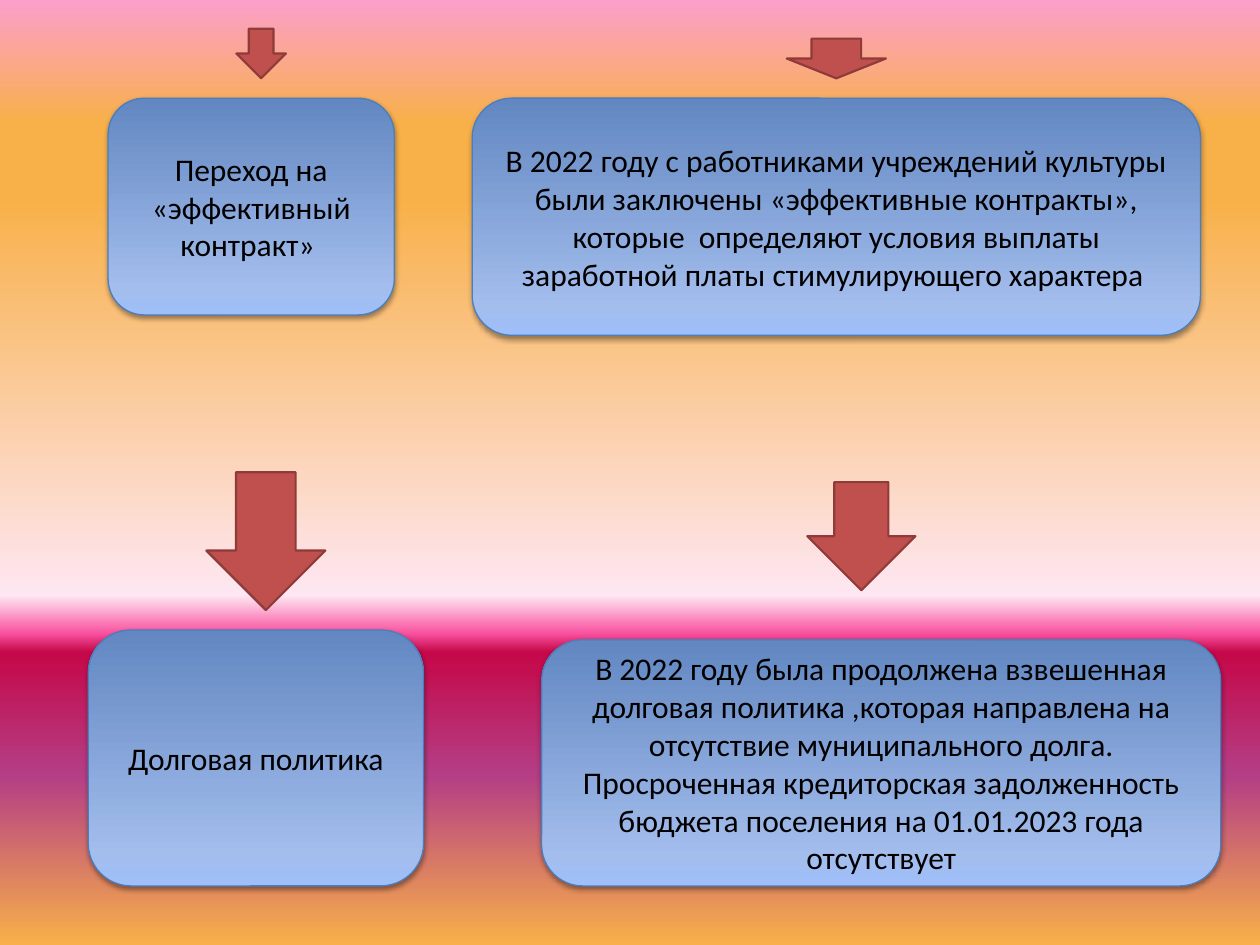
from lxml.etree import SubElement
from pptx import Presentation
from pptx.dml.color import RGBColor
from pptx.enum.shapes import MSO_SHAPE
from pptx.enum.text import MSO_ANCHOR, PP_ALIGN
from pptx.oxml.ns import qn
from pptx.util import Cm, Pt

COLORS = {
    "text": "000000",
    "card_line": "4B7EBC",
    "arrow": "C0504D",
    "arrow_line": "8E3B39",
    "shadow": "000000",
}
CARD_STOPS = {0: "9FBFFB", 12: "A3BDED", 100: "6287C1"}
BACKGROUND_STOPS = {
    0: "FC9FCB", 13: "F8B049", 21: "F8B049", 63: "FEE7F2",
    67: "F952A0", 69: "C50849", 82: "B43E85", 100: "F8B049",
}
STEPS = [
    {
        "text": "Переход на «эффективный контракт» ",
        "box": (2.18, 1.98, 5.77, 4.37),
        "arrow": {"width": 1, "height": 1, "shift": 0.2, "gap": 0.4},
    },
    {
        "text": "В 2022 году с работниками учреждений культуры были заключены "
                "«эффективные контракты», которые  определяют условия выплаты "
                "заработной платы стимулирующего характера ",
        "box": (9.52, 1.98, 14.68, 4.78),
        "arrow": {"width": 2, "height": 0.8, "shift": 0, "gap": 0.4},
    },
    {
        "text": "Долговая политика",
        "box": (1.78, 12.7, 6.76, 5.16),
        "arrow": {"width": 2.4, "height": 2.78, "shift": 0.2, "gap": 0.4},
    },
    {
        "text": "В 2022 году была продолжена взвешенная долговая политика ,которая "
                "направлена на отсутствие муниципального долга. Просроченная "
                "кредиторская задолженность бюджета поселения на 01.01.2023 года "
                "отсутствует",
        "box": (10.92, 12.9, 13.69, 4.96),
        "arrow": {"width": 2.18, "height": 2.18, "shift": -0.4, "gap": 1},
    },
]


def rgb(name):
    return RGBColor.from_string(COLORS[name])


def set_gradient(fill, element, stops, angle):
    fill.gradient()
    fill.gradient_angle = angle
    stop_list = element.find(".//" + qn("a:gsLst"))
    for old_stop in list(stop_list):
        stop_list.remove(old_stop)
    for position, color in stops.items():
        stop = SubElement(stop_list, qn("a:gs"), pos=str(position * 1000))
        SubElement(stop, qn("a:srgbClr"), val=color)


def add_shadow(shape):
    effects = shape.element.spPr.find(qn("a:effectLst"))
    shadow = SubElement(
        effects, qn("a:outerShdw"), blurRad=str(Pt(3.1)), dist=str(Pt(1.6)),
        dir="5400000", rotWithShape="0",
    )
    color = SubElement(shadow, qn("a:srgbClr"), val=COLORS["shadow"])
    SubElement(color, qn("a:alpha"), val="38000")


def write_text(shape, text, *, size=18, font="Calibri", color="text",
               align=PP_ALIGN.CENTER, anchor=MSO_ANCHOR.MIDDLE):
    frame = shape.text_frame
    frame.word_wrap = True
    frame.vertical_anchor = anchor
    paragraph = frame.paragraphs[0]
    paragraph.alignment = align
    run = paragraph.add_run()
    run.text = text
    run.font.size = Pt(size)
    run.font.name = font
    run.font.color.rgb = rgb(color)


def add_outlined(slide, kind, box, line, line_width):
    shape = slide.shapes.add_shape(kind, *(Cm(length) for length in box))
    shape.shadow.inherit = False
    shape.line.color.rgb = rgb(line)
    shape.line.width = Pt(line_width)
    return shape


def add_card(slide, box, text):
    card = add_outlined(slide, MSO_SHAPE.ROUNDED_RECTANGLE, box, "card_line", 0.75)
    set_gradient(card.fill, card.element, CARD_STOPS, 90)
    add_shadow(card)
    write_text(card, text)


def add_arrow_above(slide, box, width, height, shift, gap):
    left, top, card_width, _ = box
    arrow_left = left + (card_width - width) / 2 + shift
    arrow_box = (arrow_left, top - gap - height, width, height)
    arrow = add_outlined(slide, MSO_SHAPE.DOWN_ARROW, arrow_box, "arrow_line", 1.25)
    arrow.fill.solid()
    arrow.fill.fore_color.rgb = rgb("arrow")


def main():
    presentation = Presentation()
    presentation.slide_width = Cm(25.4)
    presentation.slide_height = Cm(19.05)
    slide = presentation.slides.add_slide(presentation.slide_layouts[6])
    set_gradient(slide.background.fill, slide.element, BACKGROUND_STOPS, 270)
    for step in STEPS:
        add_card(slide, step["box"], step["text"])
    for step in STEPS:
        add_arrow_above(slide, step["box"], **step["arrow"])
    presentation.save("out.pptx")


if __name__ == "__main__":
    main()
